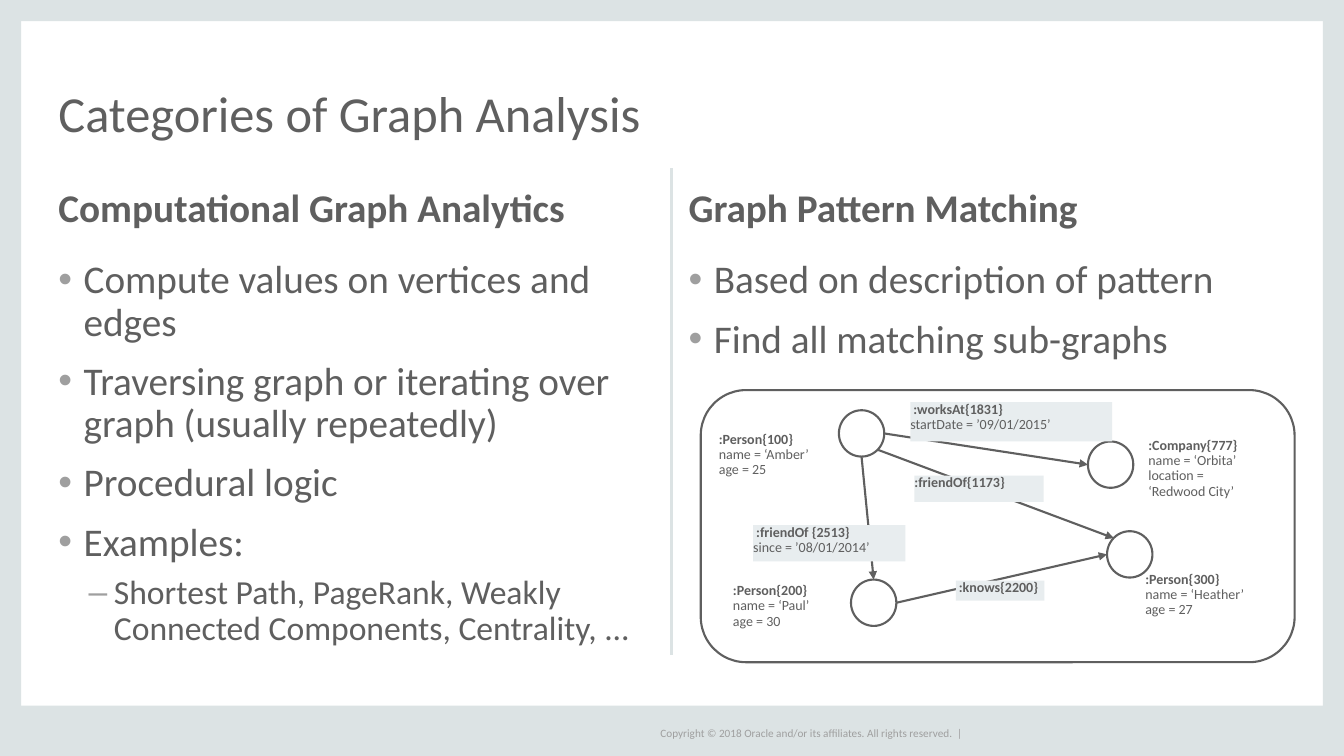
"""Build the slide comparing two categories of graph analysis."""
from lxml.etree import SubElement
from pptx import Presentation
from pptx.dml.color import RGBColor
from pptx.enum.shapes import MSO_CONNECTOR, MSO_SHAPE
from pptx.enum.text import MSO_ANCHOR, MSO_AUTO_SIZE, PP_ALIGN
from pptx.oxml.ns import qn
from pptx.util import Inches, Pt

FONT = "Calibri"
GREY = RGBColor(0x5F, 0x5F, 0x5F)
LIGHT_GREY = RGBColor(0x9F, 0x9F, 0x9F)
BORDER = RGBColor(0xDC, 0xE3, 0xE4)
LABEL = RGBColor(0xE8, 0xED, 0xEF)
WHITE = RGBColor(0xFF, 0xFF, 0xFF)

NODE_WIDTH, NODE_HEIGHT = 0.45, 0.46
SITES = {"top": (0.5, 0), "bottom": (0.5, 1), "left": (0, 0.5), "right": (1, 0.5),
         "top left": (0.15, 0.15), "bottom right": (0.85, 0.85)}
NODES = {"Amber": (8.32, 4.07), "Paul": (8.44, 5.75),
         "Heather": (10.98, 5.27), "Company": (10.79, 4.38)}
EDGES = [("Amber", "right", "Company", "left"),
         ("Amber", "bottom right", "Heather", "top left"),
         ("Amber", "bottom", "Paul", "top"),
         ("Paul", "right", "Heather", "left")]
NODE_LABELS = [
    (7.13, 4.29, [":Person{100}", "name = ‘Amber’", "age = 25"]),
    (7.27, 5.79, [":Person{200}", "name = ‘Paul’", "age = 30"]),
    (11.36, 5.68, [":Person{300}", "name = ‘Heather’", "age = 27"]),
    (11.39, 4.35, [":Company{777}", "name = ‘Orbita’", "location =", "‘Redwood City’"]),
]
EDGE_LABELS = [
    (9.03, 3.99, 2, 0.39, 0.03, [":worksAt{1831}", "startDate = ’09/01/2015’"]),
    (9.07, 4.72, 1.28, 0.26, 0, [":friendOf{1173}"]),
    (9.48, 5.76, 0.88, 0.2, 0.03, [":knows{2200}"]),
    (7.47, 5.21, 1.51, 0.36, 0.03, [":friendOf {2513}", "since = ’08/01/2014’"]),
]
COLUMNS = [
    (0.58, "Computational Graph Analytics",
     [("Compute values on vertices and edges", 0),
      ("Traversing graph or iterating over graph (usually repeatedly)", 0),
      ("Procedural logic", 0),
      ("Examples:", 0),
      ("Shortest Path, PageRank, Weakly Connected Components, Centrality, ...", 1)]),
    (6.83, "Graph Pattern Matching",
     [("Based on description of pattern", 0), ("Find all matching sub-graphs", 0)]),
]


def place(shape, left, top, width, height):
    """Move and size a shape, in inches."""
    shape.left, shape.top = Inches(left), Inches(top)
    shape.width, shape.height = Inches(width), Inches(height)


def prepare_frame(shape, anchor=MSO_ANCHOR.TOP, wrap=True):
    """Clear the margins of a text frame and return it."""
    frame = shape.text_frame
    frame.margin_left = frame.margin_right = frame.margin_top = frame.margin_bottom = 0
    frame.auto_size = MSO_AUTO_SIZE.NONE
    frame.vertical_anchor = anchor
    frame.word_wrap = wrap
    return frame


def style(para, size, color=GREY, bold=False, spacing=0.9, before=0):
    """Set the font and spacing of a left-aligned paragraph."""
    para.alignment = PP_ALIGN.LEFT
    para.line_spacing = spacing
    para.space_before = Pt(before)
    para.space_after = Pt(0)
    font = para.font
    font.name, font.size, font.bold = FONT, Pt(size), bold
    font.color.rgb = color


def set_bullet(para, level):
    """Give a paragraph its grey bullet and hanging indent."""
    para.level = level
    properties = para._p.get_or_add_pPr()
    properties.set("marL", str(Inches((0.25, 0.55)[level])))
    properties.set("indent", str(Inches(-0.25)))
    color = SubElement(properties, qn("a:buClr"))
    SubElement(color, qn("a:srgbClr"), val=str(LIGHT_GREY))
    SubElement(properties, qn("a:buFont"), typeface="Arial")
    SubElement(properties, qn("a:buChar"), char="•–"[level])


def fill_heading(shape, text, size, anchor, bold, spacing):
    """Write a one-line heading into a placeholder."""
    para = prepare_frame(shape, anchor).paragraphs[0]
    para.text = text
    style(para, size, bold=bold, spacing=spacing)


def fill_list(shape, items):
    """Write a two-level bulleted list into a placeholder."""
    frame = prepare_frame(shape)
    for index, (text, level) in enumerate(items):
        para = frame.add_paragraph() if index else frame.paragraphs[0]
        para.text = text
        set_bullet(para, level)
        style(para, (28, 24)[level], before=(12, 8)[level] if index else 0)


def add_preset(page, kind, left, top, width, height, fill, line=None):
    """Add a preset shape without a shadow."""
    shape = page.shapes.add_shape(kind, Inches(left), Inches(top), Inches(width), Inches(height))
    shape.shadow.inherit = False
    shape.fill.solid()
    shape.fill.fore_color.rgb = fill
    if line is None:
        shape.line.fill.background()
    else:
        shape.line.color.rgb = line
        shape.line.width = Pt(1.5)
    return shape


def add_text_box(page, left, top, width, height):
    """Add an empty text box."""
    return page.shapes.add_textbox(Inches(left), Inches(top), Inches(width), Inches(height))


def fill_label(shape, lines, indent=0):
    """Write a bold type line followed by its properties."""
    frame = prepare_frame(shape)
    for index, text in enumerate(lines):
        para = frame.add_paragraph() if index else frame.paragraphs[0]
        para.text = text
        if index == 0:
            para._p.get_or_add_pPr().set("marL", str(Inches(indent)))
        style(para, 10, bold=index == 0)


def add_line(page, start, end, color, arrow=False):
    """Add a straight line, with an arrowhead at its end on request."""
    points = [Inches(value) for value in (*start, *end)]
    line = page.shapes.add_connector(MSO_CONNECTOR.STRAIGHT, *points)
    line.line.color.rgb = color
    line.line.width = Pt(1.5)
    if arrow:
        SubElement(line.line._get_or_add_ln(), qn("a:tailEnd"), type="triangle")
    SubElement(line._element.spPr, qn("a:effectLst"))


def site(node, side):
    """Return the point on a node's outline where an edge attaches."""
    left, top = NODES[node]
    across, down = SITES[side]
    return left + across * NODE_WIDTH, top + down * NODE_HEIGHT


def add_backdrop(page):
    """Add the border, the copyright line and the column divider."""
    for box in [(0, 0, 0.21, 7.5), (13.12, 0, 0.21, 7.5),
                (0, 7, 13.33, 0.5), (0, 0, 13.33, 0.21)]:
        add_preset(page, MSO_SHAPE.RECTANGLE, *box, BORDER)
    footer = prepare_frame(add_text_box(page, 6.55, 7.17, 3.05, 0.2), MSO_ANCHOR.MIDDLE, False)
    para = footer.paragraphs[0]
    para.text = "Copyright © 2018 Oracle and/or its affiliates. All rights reserved.  |"
    style(para, 8, LIGHT_GREY, spacing=1)
    add_line(page, (6.66, 1.67), (6.66, 6.5), BORDER)


def add_graph(page):
    """Add the property graph with its nodes, edges and labels."""
    add_preset(page, MSO_SHAPE.ROUNDED_RECTANGLE, 6.95, 3.87, 5.89, 2.7, WHITE, GREY)
    for left, top in NODES.values():
        add_preset(page, MSO_SHAPE.OVAL, left, top, NODE_WIDTH, NODE_HEIGHT, WHITE, GREY)
    for left, top, lines in NODE_LABELS:
        fill_label(add_text_box(page, left, top, 1.13, 0.43), lines)
    for source, leaving, target, entering in EDGES:
        add_line(page, site(source, leaving), site(target, entering), GREY, arrow=True)
    for *box, indent, lines in EDGE_LABELS:
        fill_label(add_preset(page, MSO_SHAPE.RECTANGLE, *box, LABEL), lines, indent)


def main():
    """Build and save the deck."""
    deck = Presentation()
    deck.slide_width, deck.slide_height = Inches(13.33), Inches(7.5)
    page = deck.slides.add_slide(deck.slide_layouts.get_by_name("Comparison"))
    title, *bodies = page.placeholders
    place(title, 0.58, 0.44, 12.17, 0.97)
    fill_heading(title, "Categories of Graph Analysis", 36, MSO_ANCHOR.BOTTOM, False, 0.8)
    for (left, text, items), heading, body in zip(COLUMNS, bodies[::2], bodies[1::2]):
        place(heading, left, 1.67, 5.92, 0.83)
        fill_heading(heading, text, 28, MSO_ANCHOR.MIDDLE, True, 0.9)
        place(body, left, 2.58, 5.92, 3.92)
        fill_list(body, items)
    add_backdrop(page)
    add_graph(page)
    deck.save("out.pptx")


if __name__ == "__main__":
    main()
